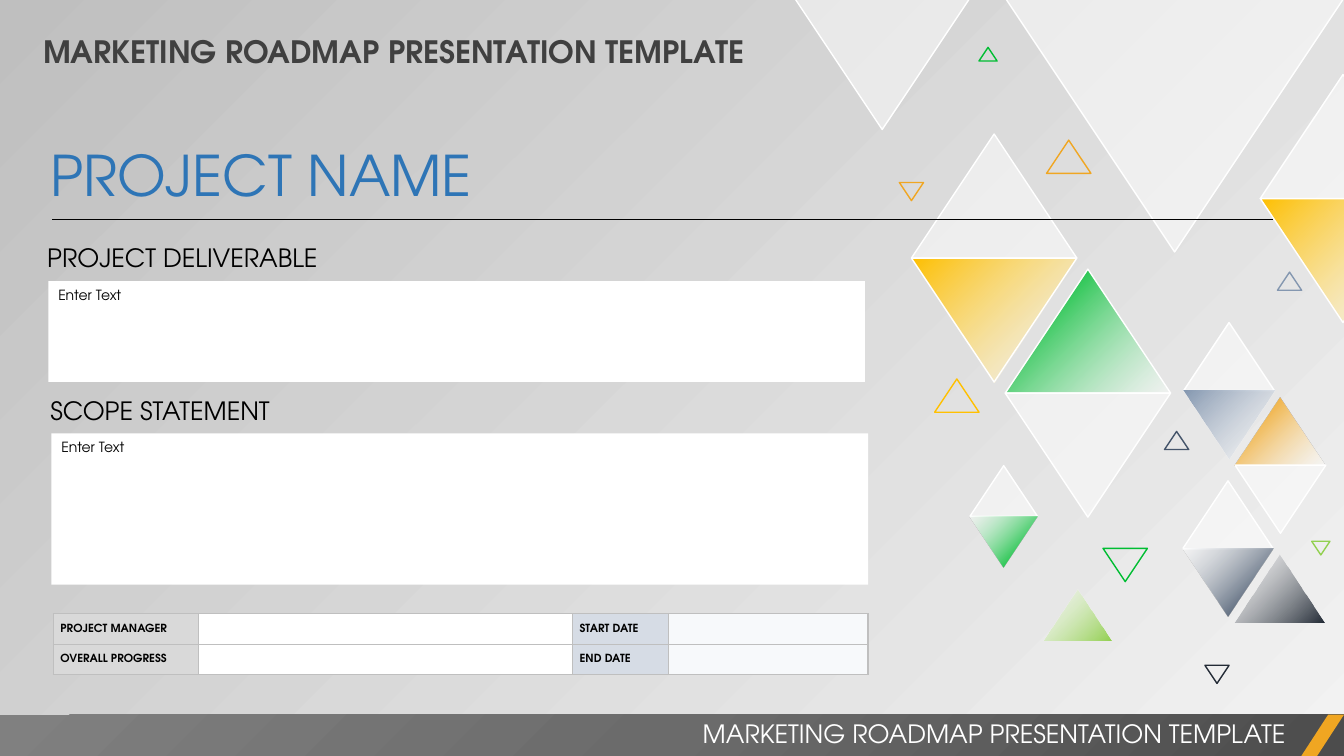
from lxml import etree
from pptx import Presentation
from pptx import util as u
from pptx.dml.color import RGBColor
from pptx.enum import shapes, text
from pptx.oxml import ns

WHITE = RGBColor(0xFF, 0xFF, 0xFF)
BLACK = RGBColor(0x00, 0x00, 0x00)
CHARCOAL = RGBColor(0x40, 0x40, 0x40)
BLUE = RGBColor(0x2E, 0x75, 0xB6)
GOLD = RGBColor(0xFF, 0xC0, 0x00)
GREEN = RGBColor(0x00, 0xBD, 0x32)
ORANGE = RGBColor(0xF0, 0xA6, 0x22)
LIME = RGBColor(0x92, 0xD0, 0x50)
STEEL = RGBColor(0x84, 0x97, 0xB0)
SLATE = RGBColor(0x44, 0x54, 0x6A)
INK = RGBColor(0x22, 0x2A, 0x35)
PALE = RGBColor(0xF2, 0xF2, 0xF2)
GREY = RGBColor(0xBF, 0xBF, 0xBF)
LABEL_GREY = RGBColor(0xD9, 0xD9, 0xD9)
LABEL_BLUE = RGBColor(0xD6, 0xDC, 0xE5)
VALUE_BLUE = RGBColor(0xF7, 0xF9, 0xFB)
BAR = [(0, RGBColor(0x4C, 0x4C, 0x4C), 100), (50, RGBColor(0x6B, 0x6B, 0x6B), 100),
       (100, RGBColor(0x80, 0x80, 0x80), 100)]
GLASS = [(0, WHITE, 50)]
BANNER = "MARKETING ROADMAP PRESENTATION TEMPLATE"


def fade_out(color):
    return [(0, color, 100), (100, WHITE, 50)]


def fade_in(color):
    return [(0, WHITE, 50), (82, color, 100)]


def sub(parent, tag, **attrs):
    return etree.SubElement(parent, ns.qn(tag), {k: str(v) for k, v in attrs.items()})


class Deck:
    """Style and current slide, with one method per kind of element."""

    font = "TeX Gyre Adventor"

    def __init__(self):
        self.prs = Presentation()
        self.prs.slide_width, self.prs.slide_height = u.Inches(13.33), u.Inches(7.5)
        self.s = self.prs.slides.add_slide(self.prs.slide_layouts[6])

    def paint(self, fill, host, stops, radial=False):
        if len(stops) == 1:
            fill.solid()
            fill.fore_color.rgb = stops[0][1]
            if stops[0][2] < 100:
                sub(next(host.iter(ns.qn("a:srgbClr"))), "a:alpha", val=stops[0][2] * 1000)
            return
        fill.gradient()
        grad = next(host.iter(ns.qn("a:gradFill")))
        for child in list(grad):
            grad.remove(child)
        grad.set("rotWithShape", "1")
        gs_list = sub(grad, "a:gsLst")
        for pos, color, alpha in stops:
            clr = sub(sub(gs_list, "a:gs", pos=pos * 1000), "a:srgbClr", val=color)
            if alpha < 100:
                sub(clr, "a:alpha", val=alpha * 1000)
        if radial:
            sub(sub(grad, "a:path", path="circle"), "a:fillToRect", l=100000, t=100000)
        else:
            sub(grad, "a:lin", ang=225 * 60000, scaled=0)

    def shape(self, kind, x, y, w, h, stops=None, line=None, radial=False):
        sp = self.s.shapes.add_shape(kind, u.Inches(x), u.Inches(y), u.Inches(w), u.Inches(h))
        sp.shadow.inherit = False
        if stops:
            self.paint(sp.fill, sp.element, stops, radial)
        else:
            sp.fill.background()
        if line is None:
            sp.line.fill.background()
        else:
            sp.line.color.rgb = line
            sp.line.width = u.Pt(1)
        return sp

    def triangle(self, x, y, w, down=False, stops=None, line=None):
        sp = self.shape(shapes.MSO_SHAPE.ISOSCELES_TRIANGLE, x, y, w, 0.75 * w, stops, line)
        sp.rotation = 180 if down else 0

    def diamond(self, x, y, w, stops, glass_top, edge=None):
        halves = [(GLASS, WHITE), (stops, edge)]
        for i, (fill, line) in enumerate(halves if glass_top else halves[::-1]):
            self.triangle(x, y + i * 0.75 * w, w, i == 1, fill, line)

    def put_text(self, tf, words, size, color=BLACK, bold=False, align=text.PP_ALIGN.LEFT):
        tf.text = words
        tf.word_wrap = True
        p = tf.paragraphs[0]
        p.alignment = align
        for r in p.runs:
            r.font.name, r.font.size, r.font.bold = self.font, u.Pt(size), bold
            r.font.color.rgb = color
        return p

    def label(self, x, y, w, h, words, size, **style):
        sp = self.s.shapes.add_textbox(u.Inches(x), u.Inches(y), u.Inches(w), u.Inches(h))
        self.put_text(sp.text_frame, words, size, **style)
        sp.text_frame.auto_size = text.MSO_AUTO_SIZE.SHAPE_TO_FIT_TEXT

    def entry(self, x, y, w, h):
        sp = self.shape(shapes.MSO_SHAPE.RECTANGLE, x, y, w, h, [(0, WHITE, 100)])
        self.put_text(sp.text_frame, "Enter Text", 10)
        sp.text_frame.vertical_anchor = text.MSO_ANCHOR.TOP

    def rule(self, x1, x2, y):
        cx = self.s.shapes.add_connector(shapes.MSO_CONNECTOR.STRAIGHT, u.Inches(x1),
                                         u.Inches(y), u.Inches(x2), u.Inches(y))
        cx.line.color.rgb, cx.line.width = BLACK, u.Pt(0.5)
        sub(cx.element.spPr, "a:effectLst")

    def table(self, x, y, widths, row_h, rows, fills):
        frame = self.s.shapes.add_table(len(rows), len(widths), u.Inches(x), u.Inches(y),
                                        u.Inches(sum(widths)), u.Inches(row_h * len(rows)))
        tbl = frame.table
        tbl.first_row = tbl.horz_banding = False
        for col, w in zip(tbl.columns, widths):
            col.width = u.Inches(w)
        for i, row in enumerate(rows):
            tbl.rows[i].height = u.Inches(row_h)
            for j, words in enumerate(row):
                self.cell(tbl.cell(i, j), words, fills[j])

    def cell(self, cell, words, fill):
        p = self.put_text(cell.text_frame, words, 8, bold=True)
        p.line_spacing = 1.07
        if not words:
            sub(p._p, "a:endParaRPr", sz=800)
        cell.vertical_anchor = text.MSO_ANCHOR.MIDDLE
        cell.margin_left = cell.margin_right = u.Inches(0.07)
        cell.margin_top = cell.margin_bottom = 0
        props = cell._tc.get_or_add_tcPr()
        for side in "LRTB":
            ln = sub(props, f"a:ln{side}", w=u.Pt(1))
            sub(sub(ln, "a:solidFill"), "a:srgbClr", val=GREY)
        cell.fill.solid()
        cell.fill.fore_color.rgb = fill


def main():
    d = Deck()
    d.paint(d.s.background.fill, d.s.element, [(0, PALE, 40), (100, GREY, 100)])

    for x, y, w, stops, glass_top, edge in [
            (9.04, 1.33, 1.64, fade_out(GOLD), True, WHITE),
            (9.97, 2.67, 1.64, fade_in(GREEN), False, WHITE),
            (11.73, 4.77, 0.9, fade_in(SLATE), True, None),
            (11.74, 3.2, 0.9, fade_out(STEEL), True, None),
            (12.25, 3.94, 0.9, fade_in(ORANGE), False, None),
            (9.62, 4.62, 0.67, fade_in(GREEN), True, None),
            (12.5, 0.74, 1.64, fade_out(GOLD), True, WHITE)]:
        d.diamond(x, y, w, stops, glass_top, edge)
    for x, w in [(9.97, 3.36), (7.88, 1.74)]:
        d.triangle(x, -0.02, w, True, GLASS, WHITE)
    d.triangle(12.24, 5.5, 0.9, stops=fade_out(INK))
    d.triangle(10.35, 5.85, 0.67, stops=fade_out(LIME))
    for x, y, w, down, color in [
            (10.94, 5.44, 0.44, True, GREEN), (9.27, 3.76, 0.44, False, GOLD),
            (11.55, 4.28, 0.24, False, SLATE), (11.95, 6.6, 0.24, True, INK),
            (8.92, 1.81, 0.24, True, ORANGE), (12.67, 2.7, 0.24, False, STEEL),
            (9.71, 0.47, 0.18, False, GREEN), (13.01, 5.37, 0.18, True, LIME),
            (10.38, 1.39, 0.44, False, ORANGE)]:
        d.triangle(x, y, w, down, line=color)

    d.label(0.33, 0.28, 8.61, 0.47, BANNER, 22, color=CHARCOAL, bold=True)
    d.shape(shapes.MSO_SHAPE.RECTANGLE, 0, 7.09, 13.33, 0.42, BAR, radial=True)
    slash = d.shape(shapes.MSO_SHAPE.PARALLELOGRAM, 12.9, 7.09, 0.43, 0.42, [(0, ORANGE, 100)])
    slash.adjustments[0] = 0.65
    d.label(5.25, 7.08, 7.6, 0.4, BANNER, 18, color=WHITE, align=text.PP_ALIGN.RIGHT)
    d.label(0.4, 1.35, 12.27, 0.77, "PROJECT NAME", 40, color=BLUE)
    d.rule(0.52, 12.63, 2.18)

    d.table(0.53, 6.09, [1.44, 3.71, 0.95, 1.98], 0.3,
            [["PROJECT MANAGER", "", "START DATE", ""], ["OVERALL PROGRESS", "", "END DATE", ""]],
            [LABEL_GREY, WHITE, LABEL_BLUE, VALUE_BLUE])
    for x, y, heading, h in [(0.37, 2.36, "PROJECT DELIVERABLE", 1), (0.4, 3.87, "SCOPE STATEMENT", 1.5)]:
        d.label(x, y, 3.05, 0.4, heading, 18)
        d.entry(x + 0.11, y + 0.43, 8.1, h)
    d.prs.save("out.pptx")


if __name__ == "__main__":
    main()
